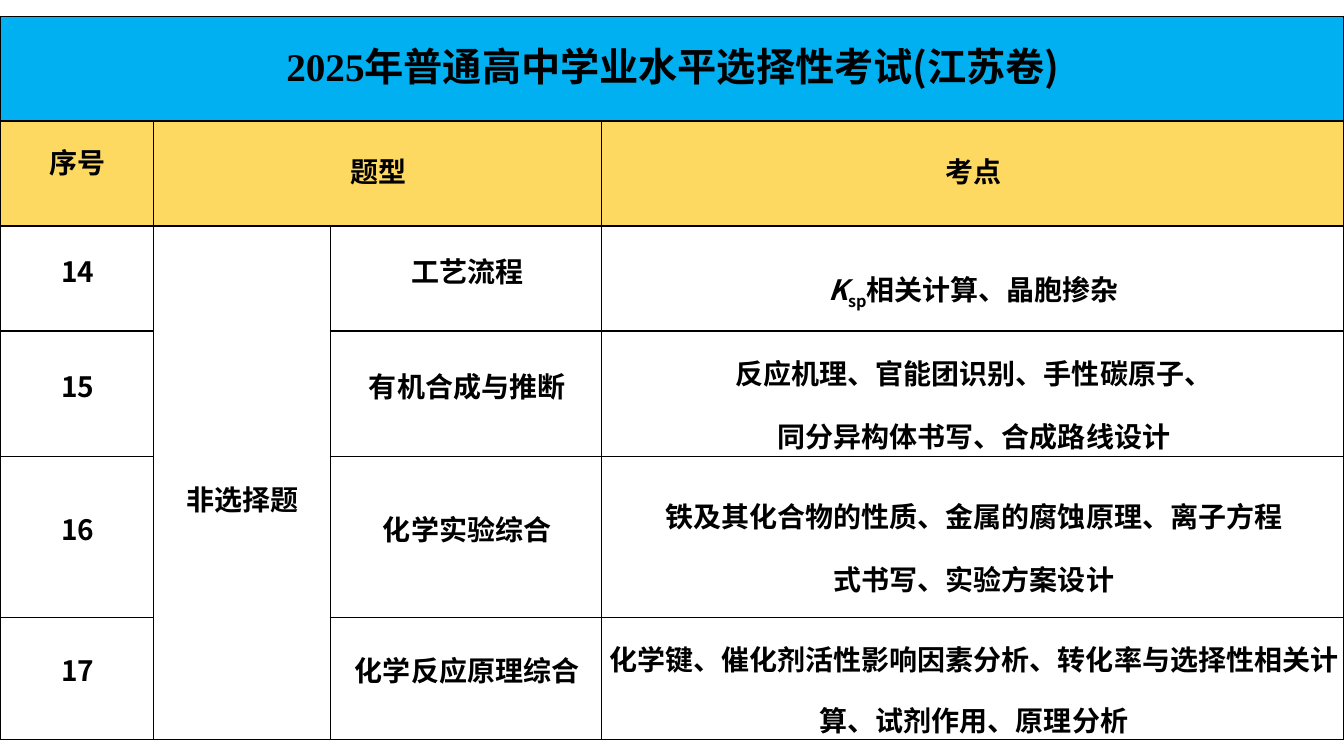
"""Build the exam overview slide: one table of question numbers, types and topics."""
from lxml.etree import SubElement
from pptx import Presentation
from pptx.dml.color import RGBColor
from pptx.enum.text import MSO_ANCHOR, PP_ALIGN
from pptx.oxml.ns import qn
from pptx.util import Pt

BLACK = RGBColor(0x00, 0x00, 0x00)
WHITE = RGBColor(0xFF, 0xFF, 0xFF)
BLUE = RGBColor(0x00, 0xB0, 0xF0)
YELLOW = RGBColor(0xFE, 0xD9, 0x61)
SANS = "Noto Sans CJK SC"
SERIF = "Times New Roman"

COLUMN_WIDTHS = [109.5, 126.5, 194, 530]
ROW_HEIGHTS = [75, 75, 75, 89.5, 115, 82]
QUESTIONS = [
    ("14", "工艺流程", []),
    ("15", "有机合成与推断", ["反应机理、官能团识别、手性碳原子、", "同分异构体书写、合成路线设计"]),
    ("16", "化学实验综合", ["铁及其化合物的性质、金属的腐蚀原理、离子方程", "式书写、实验方案设计"]),
    ("17", "化学反应原理综合", ["化学键、催化剂活性影响因素分析、转化率与选择性相关计算、试剂作用、原理分析"]),
]


def add_span(para, text, size=20, font=SANS, italic=False, baseline=0):
    span = para.add_run()
    span.text = text
    span.font.size = Pt(size)
    span.font.name = font
    span.font.bold = True
    span.font.italic = italic
    span.font.color.rgb = BLACK
    properties = span.font._element
    SubElement(properties, qn("a:ea")).set("typeface", SANS)
    if baseline:
        properties.set("baseline", str(baseline * 1000))


def write_cell(cell, *lines, spacing=Pt(16.6), before=1.1, top=0):
    cell.margin_top = Pt(top)
    for index, spans in enumerate(lines):
        para = cell.text_frame.paragraphs[0] if index == 0 else cell.text_frame.add_paragraph()
        para.alignment = PP_ALIGN.CENTER
        para.line_spacing = spacing
        para.space_before = Pt(before)
        para._p.get_or_add_pPr().set("marL", str(Pt(1.5)))
        for text, style in spans:
            add_span(para, text, **style)


deck = Presentation()
deck.slide_width, deck.slide_height = Pt(960), Pt(540)
page = deck.slides.add_slide(deck.slide_layouts[6])
frame = page.shapes.add_table(
    len(ROW_HEIGHTS), len(COLUMN_WIDTHS), Pt(0), Pt(11.5), Pt(sum(COLUMN_WIDTHS)), Pt(sum(ROW_HEIGHTS))
)
table = frame.table
table.first_row = table.horz_banding = False
for column, width in zip(table.columns, COLUMN_WIDTHS):
    column.width = Pt(width)

for row, height, color in zip(table.rows, ROW_HEIGHTS, [BLUE, YELLOW] + [WHITE] * 4):
    row.height = Pt(height)
    for cell in row.cells:
        cell.margin_left = cell.margin_right = cell.margin_top = cell.margin_bottom = 0
        cell.vertical_anchor = MSO_ANCHOR.MIDDLE
        for side in ("lnL", "lnR", "lnT", "lnB"):
            border = SubElement(cell._tc.get_or_add_tcPr(), qn(f"a:{side}"), w=str(Pt(1)))
            border_fill = SubElement(border, qn("a:solidFill"))
            SubElement(border_fill, qn("a:srgbClr"), val=str(BLACK))
        cell.fill.solid()
        cell.fill.fore_color.rgb = color

table.cell(0, 0).merge(table.cell(0, 3))
table.cell(1, 1).merge(table.cell(1, 2))
table.cell(2, 1).merge(table.cell(5, 1))

title = [("2025", {"size": 28, "font": SERIF}), ("年普通高中学业水平选择性考试(江苏卷)", {"size": 28})]
write_cell(table.cell(0, 0), title, top=17.7)
for column_index, heading, top in [(0, "序号", 0), (1, "题型", 12.4), (3, "考点", 12.4)]:
    write_cell(table.cell(1, column_index), [(heading, {})], spacing=Pt(11.8), before=0.6, top=top)
write_cell(table.cell(2, 1), [("非选择题", {})], top=35.4)

for row_index, (number, kind, topics) in enumerate(QUESTIONS, start=2):
    write_cell(table.cell(row_index, 0), [(number, {})])
    write_cell(table.cell(row_index, 2), [(kind, {})])
    write_cell(table.cell(row_index, 3), *[[(topic, {})] for topic in topics], spacing=1.5)
solubility = [("K", {"italic": True}), ("sp", {"baseline": -25}), ("相关计算、晶胞掺杂", {})]
write_cell(table.cell(2, 3), solubility, spacing=1.5)

deck.save("out.pptx")
